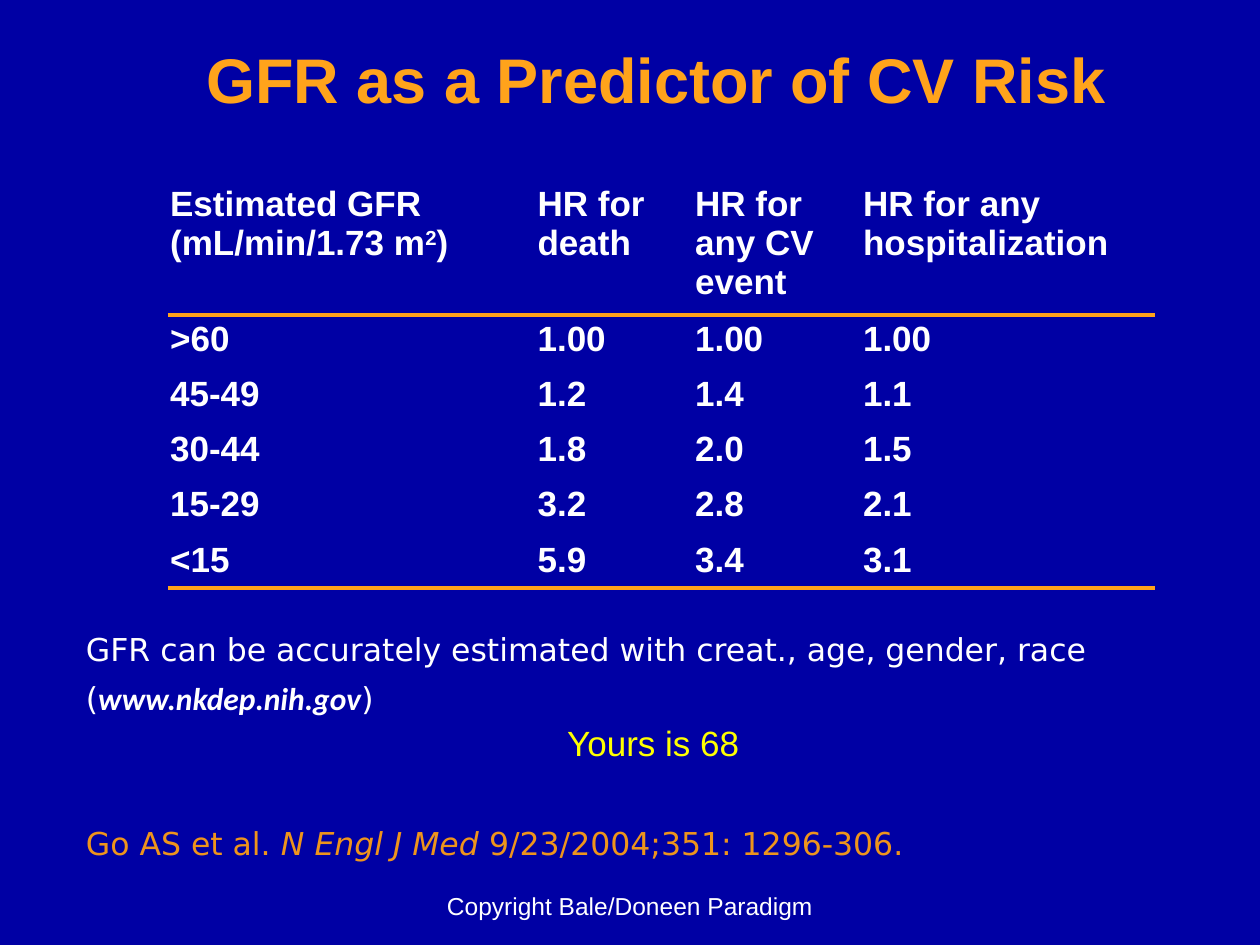
import pptx
import pptx.util
import pptx.dml.color
import pptx.enum.shapes
import pptx.enum.text
import pptx.oxml.ns
import lxml.etree

Pt = pptx.util.Pt
ALIGN = pptx.enum.text.PP_ALIGN
ANCHOR = pptx.enum.text.MSO_ANCHOR
COLORS = {"navy": "0000A4", "white": "FFFFFF", "orange": "FFA31B",
          "citation": "EE941C", "yellow": "FFFF00"}
NO_STYLE = "{2D5ABB26-0587-4C30-8999-92F81FD0307C}"
ROWS = [
    ["Estimated GFR (mL/min/1.73 m", "HR for death", "HR for any CV event", "HR for any hospitalization"],
    [">60", "1.00", "1.00", "1.00"],
    ["45-49", "1.2", "1.4", "1.1"],
    ["30-44", "1.8", "2.0", "1.5"],
    ["15-29", "3.2", "2.8", "2.1"],
    ["<15", "5.9", "3.4", "3.1"],
]


def rgb(name):
    return pptx.dml.color.RGBColor.from_string(COLORS[name])


def add_run(p, text, size=18, font="Arial", color="white", bold=False, italic=False, baseline=None):
    r = p.add_run()
    r.text = text
    r.font.size = Pt(size)
    r.font.name = font
    r.font.color.rgb = rgb(color)
    r.font.bold = bold
    r.font.italic = italic
    if baseline:
        r.font._element.set("baseline", str(baseline))
    return r


def add_box(slide, x, y, w, h, anchor=ANCHOR.TOP, wrap=True):
    tf = slide.shapes.add_textbox(Pt(x), Pt(y), Pt(w), Pt(h)).text_frame
    tf.word_wrap = wrap
    tf.vertical_anchor = anchor
    return tf


def add_title(slide, x, y, w, h):
    sp = slide.shapes.title
    sp.left, sp.top, sp.width, sp.height = Pt(x), Pt(y), Pt(w), Pt(h)
    tf = sp.text_frame
    tf.vertical_anchor = ANCHOR.MIDDLE
    p = tf.paragraphs[0]
    p.alignment = ALIGN.CENTER
    add_run(p, "GFR as a Predictor of CV Risk", size=36, color="orange", bold=True)


def add_rule(slide, x, y, w):
    line = slide.shapes.add_connector(pptx.enum.shapes.MSO_CONNECTOR.STRAIGHT, Pt(x), Pt(y), Pt(x + w), Pt(y))
    line.line.color.rgb = rgb("orange")
    line.line.width = Pt(2.25)
    lxml.etree.SubElement(line._element.spPr, pptx.oxml.ns.qn("a:effectLst"))


def add_risk_table(slide, x, y, w, h):
    header_h = 77
    row_h = (h - header_h) / (len(ROWS) - 1)
    table = slide.shapes.add_table(len(ROWS), len(ROWS[0]), Pt(x), Pt(y), Pt(w), Pt(h)).table
    table.first_row = table.horz_banding = False
    table._tbl.tblPr.find(pptx.oxml.ns.qn("a:tableStyleId")).text = NO_STYLE
    for col, width in zip(table.columns, [210, 90, 96, w - 396]):
        col.width = Pt(width)
    for i, values in enumerate(ROWS):
        table.rows[i].height = Pt(row_h if i else header_h)
        for j, text in enumerate(values):
            cell = table.cell(i, j)
            cell.fill.background()
            add_run(cell.text_frame.paragraphs[0], text, size=20, bold=True)
    p = table.cell(0, 0).text_frame.paragraphs[0]
    add_run(p, "2", size=20, bold=True, baseline=30000)
    add_run(p, ")", size=20, bold=True)
    for rule_y in (y + header_h + 1, y + h - 1):
        add_rule(slide, x + 6, rule_y, 564)


def add_notes(slide, x, y, w, h):
    tf = add_box(slide, x, y, w, h)
    sans = {"font": "DejaVu Sans"}
    cite = {"font": "DejaVu Sans", "color": "citation"}
    paragraphs = [
        (0, [("GFR can be accurately estimated with creat., age, gender, race", sans)]),
        (9.5, [("(", sans),
               ("www.nkdep.nih.gov", {"font": "Calibri", "bold": True, "italic": True}),
               (")", sans)]),
        (64.5, [("Go AS et al. ", cite),
                ("N Engl J Med", {**cite, "italic": True}),
                (" 9/23/2004;351: 1296-306.", cite)]),
    ]
    for i, (gap, runs) in enumerate(paragraphs):
        p = tf.add_paragraph() if i else tf.paragraphs[0]
        p.line_spacing = 0.85
        if gap:
            p.space_before = Pt(gap)
        for text, fmt in runs:
            add_run(p, text, **fmt)


def add_result(slide, x, y, w, h):
    tf = add_box(slide, x, y, w, h, wrap=False)
    add_run(tf.paragraphs[0], "Yours is 68", size=20, color="yellow")


def add_footer(slide, x, y, w, h):
    p = add_box(slide, x, y, w, h, anchor=ANCHOR.BOTTOM).paragraphs[0]
    p.alignment = ALIGN.CENTER
    add_run(p, "Copyright Bale/Doneen Paradigm", size=14)


def main():
    prs = pptx.Presentation()
    prs.slide_width, prs.slide_height = Pt(720), Pt(540)
    slide = prs.slides.add_slide(prs.slide_layouts[5])
    slide.background.fill.solid()
    slide.background.fill.fore_color.rgb = rgb("navy")
    add_title(slide, 30, 0, 690, 90)
    add_risk_table(slide, 90, 102, 612, 235)
    add_notes(slide, 42, 360, 666, 142.5)
    add_result(slide, 317, 409, 114.5, 31)
    add_footer(slide, 246, 492, 228, 37.5)
    prs.save("out.pptx")


if __name__ == "__main__":
    main()
